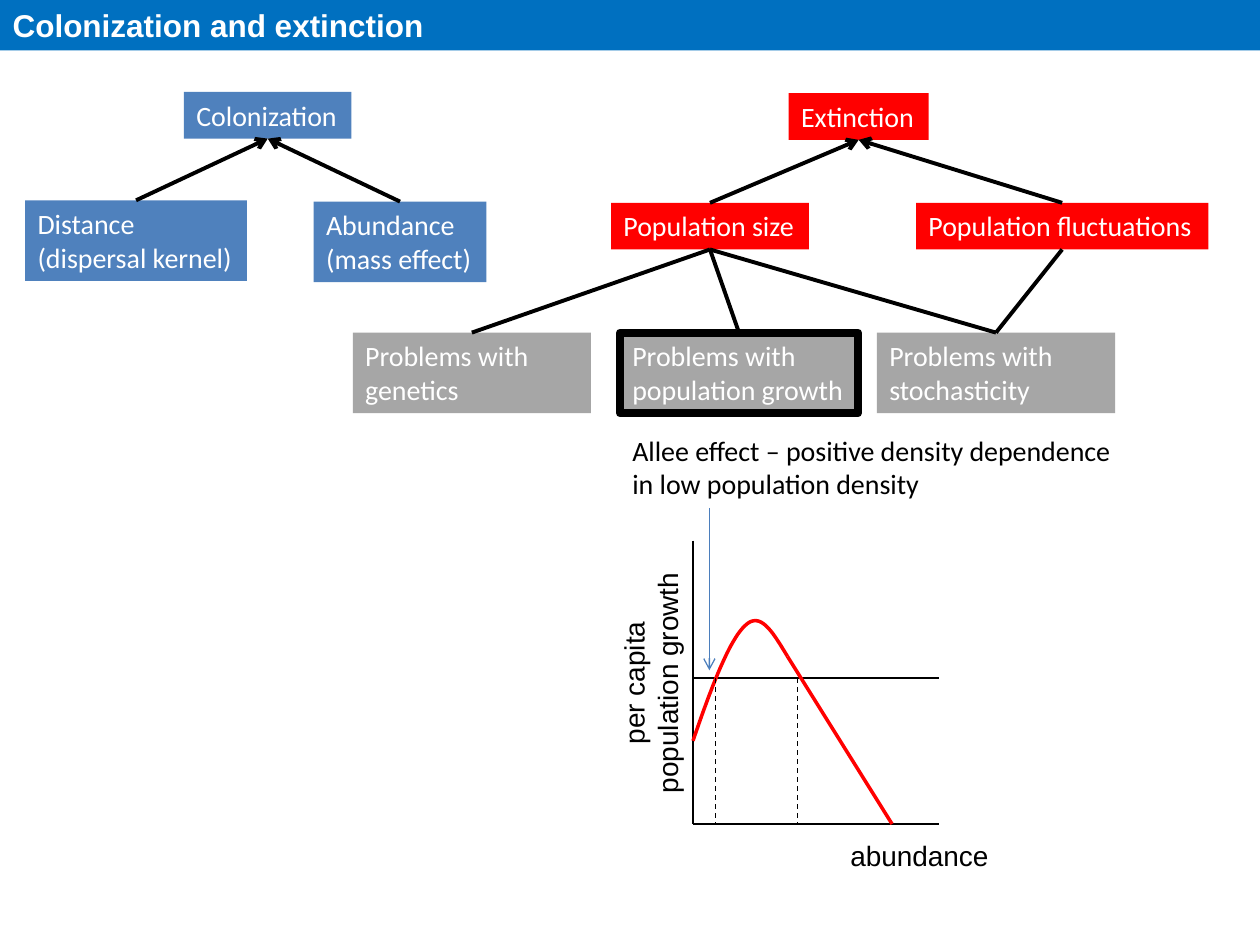
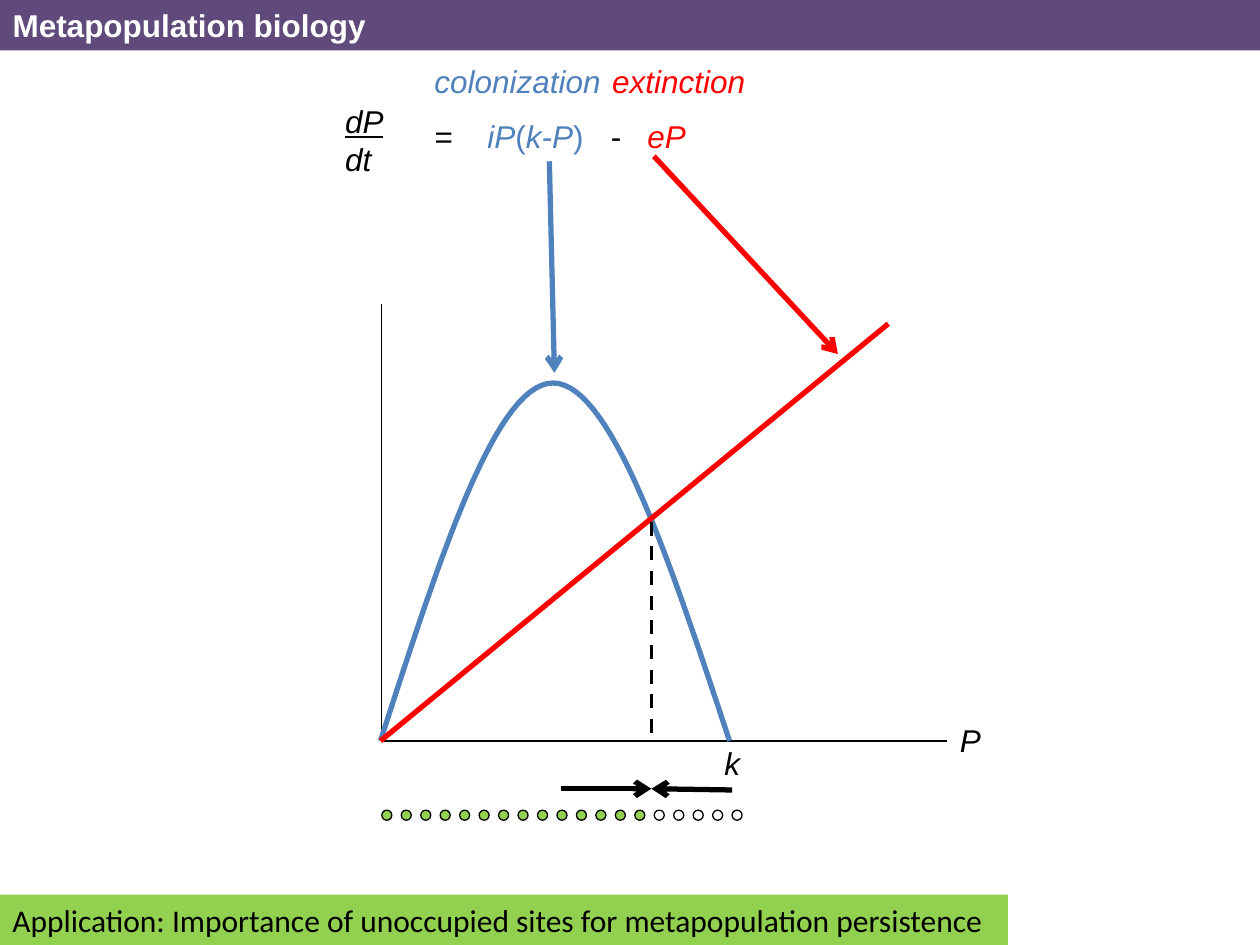
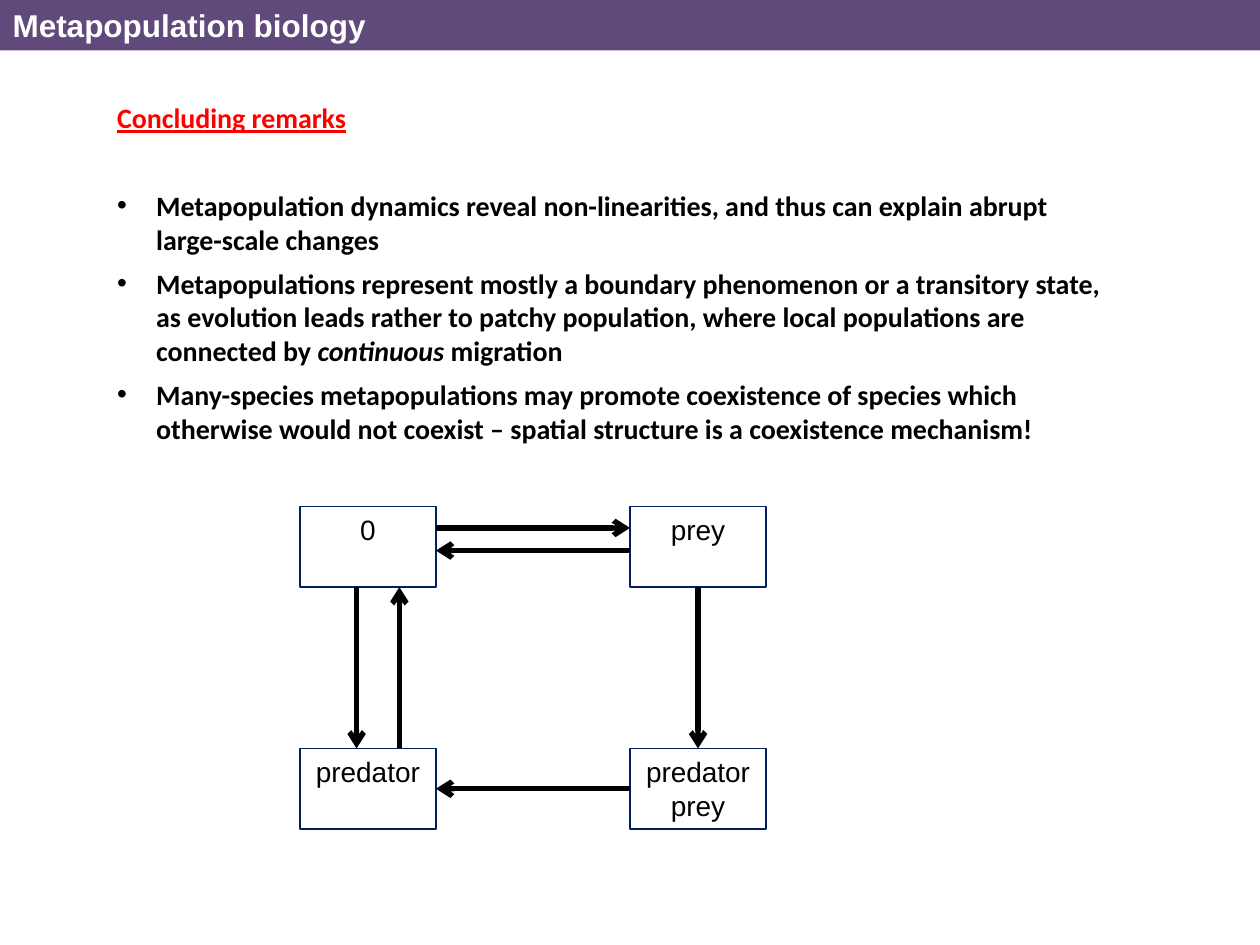
from lxml.etree import SubElement
from pptx import Presentation
from pptx.dml.color import RGBColor
from pptx.enum.dml import MSO_LINE_DASH_STYLE as Dash
from pptx.enum.shapes import MSO_CONNECTOR as Connector, MSO_SHAPE as Preset
from pptx.enum.text import MSO_ANCHOR as Anchor, MSO_AUTO_SIZE as AutoSize, PP_ALIGN as Align
from pptx.oxml.ns import qn
from pptx.util import Inches, Pt

BLACK, WHITE, RED, BLUE = "000000", "FFFFFF", "FF0000", "4F81BD"
GRAY, GREEN, NAVY, PURPLE, SKY = "A6A6A6", "92D050", "002060", "604A7B", "0070C0"
ARROW_BLUE = "4B7EBC"
TITLE_ONLY, TITLE_AND_BODY = 5, 1
TOP, LEFT, BOTTOM, RIGHT = range(4)

TREE_BOXES = {
    "colonization": ("Colonization", (1.46, 0.73, 1.33, 0.37), BLUE),
    "extinction": ("Extinction", (6.26, 0.74, 1.11, 0.37), RED),
    "distance": ("Distance\n(dispersal kernel)", (0.2, 1.59, 1.76, 0.64), BLUE),
    "abundance": ("Abundance\n(mass effect)", (2.49, 1.6, 1.37, 0.64), BLUE),
    "size": ("Population size", (4.85, 1.61, 1.57, 0.37), RED),
    "fluctuations": ("Population fluctuations", (7.27, 1.61, 2.32, 0.37), RED),
    "genetics": ("Problems with genetics", (2.8, 2.64, 1.89, 0.64), GRAY),
    "growth": ("Problems with population growth", (4.92, 2.64, 1.89, 0.64), GRAY),
    "stochasticity": ("Problems with stochasticity", (6.96, 2.64, 1.89, 0.64), GRAY),
}
TREE_LINKS = [
    ("distance", "colonization", True),
    ("abundance", "colonization", True),
    ("size", "extinction", True),
    ("fluctuations", "extinction", True),
    ("genetics", "size", False),
    ("growth", "size", False),
    ("stochasticity", "size", False),
    ("stochasticity", "fluctuations", False),
]
ALLEE_TEXT = "Allee effect – positive density dependence in low population density"
ALLEE_AXES = [
    ((5.5, 4.29), (5.5, 6.54)),
    ((5.5, 6.54), (7.45, 6.54)),
    ((5.5, 5.38), (7.45, 5.38)),
]
ALLEE_EQUILIBRIA = [5.68, 6.33]
ALLEE_CURVE = [(5.5, 5.88), (5.64, 5.47), (5.79, 5.07), (5.92, 4.96),
               (6.04, 4.85), (6.14, 5.03), (6.25, 5.21)]

LEVINS_AXES = [((3.03, 2.41), (3.03, 5.88)), ((3.03, 5.88), (7.52, 5.88))]
COLONIZATION_CURVE = [(3.02, 5.88), (3.48, 4.46), (3.93, 3.04), (4.39, 3.04),
                      (4.85, 3.04), (5.32, 4.46), (5.79, 5.88)]
LEVINS_ARROWS = [
    ((4.36, 1.28), (4.4, 2.96), BLUE),
    ((5.19, 1.24), (6.65, 2.81), RED),
    ((4.45, 6.26), (5.17, 6.26), BLACK),
    ((5.81, 6.27), (5.17, 6.26), BLACK),
]
EQUATION = [
    ("=\t", BLACK, False), ("iP", BLUE, True), ("(", BLUE, False), ("k-P", BLUE, True),
    (")\t", BLUE, False), ("-\t", BLACK, False), ("eP", RED, True),
]
EQUATION_TABS = [0.42, 1.4, 1.69]
LEVINS_LABELS = [
    ("colonization", (3.35, 0.44, 1.53, 0.4), BLUE),
    ("extinction", (4.76, 0.44, 1.27, 0.4), RED),
    ("k", (5.65, 5.86, 0.33, 0.4), BLACK),
    ("P", (7.52, 5.67, 0.37, 0.4), BLACK),
]
OCCUPIED_SITES, ALL_SITES = 14, 19
FIRST_SITE, LAST_SITE = 3.03, 5.81
APPLICATION = "Application: Importance of unoccupied sites for metapopulation persistence"

REMARKS_HEADING = "Concluding remarks"
REMARKS = [
    [("Metapopulation dynamics reveal non-linearities, and thus can explain abrupt "
      "large-scale changes", False)],
    [("Metapopulations represent mostly a boundary phenomenon or a transitory state, as "
      "evolution leads rather to patchy population, where local populations are connected by ", False),
     ("continuous", True), (" migration", False)],
    [("Many-species metapopulations may promote coexistence of species which otherwise would "
      "not coexist – spatial structure is a coexistence mechanism!", False)],
]
STATES = [["0", "prey"], ["predator", "predator\nprey"]]
STATE_COLUMNS, STATE_ROWS = (2.38, 5), (4.02, 5.94)
STATE_SIZE = (1.08, 0.64)
STATE_ARROWS = [
    ((3.46, 4.19), (5, 4.19)),
    ((5, 4.37), (3.46, 4.37)),
    ((2.83, 4.66), (2.83, 5.94)),
    ((3.17, 5.94), (3.17, 4.66)),
]


def rgb(color):
    return RGBColor.from_string(color)


def set_font(font, size, name, color, bold=False, italic=False):
    font.size, font.name, font.bold, font.italic = Pt(size), name, bold, italic
    font.color.rgb = rgb(color)


def place(shape, box):
    shape.left, shape.top, shape.width, shape.height = map(Inches, box)


def style_shape(shape, fill=None, line=None, width=0.75):
    shape.shadow.inherit = False
    if fill:
        shape.fill.solid()
        shape.fill.fore_color.rgb = rgb(fill)
    else:
        shape.fill.background()
    if line:
        shape.line.color.rgb = rgb(line)
        shape.line.width = Pt(width)
    else:
        shape.line.fill.background()


def add_preset(slide, preset, box, fill=None, line=None, width=0.75):
    shape = slide.shapes.add_shape(preset, *map(Inches, box))
    style_shape(shape, fill, line, width)
    return shape


def write(shape, text, size=16, name="Arial", color=BLACK, italic=False, align=Align.LEFT, wrap=False):
    frame = shape.text_frame
    frame.text = text
    frame.word_wrap = wrap
    frame.auto_size = AutoSize.SHAPE_TO_FIT_TEXT
    frame.vertical_anchor = Anchor.TOP
    for paragraph in frame.paragraphs:
        paragraph.alignment = align
        set_font(paragraph.font, size, name, color, italic=italic)
    return shape


def add_label(slide, text, box, **style):
    return write(slide.shapes.add_textbox(*map(Inches, box)), text, **style)


def add_line(slide, start=(0, 0), end=(0, 0), color=BLACK, width=0.75,
             arrow=False, dashed=False, begin_at=None, end_at=None):
    line = slide.shapes.add_connector(Connector.STRAIGHT, *map(Inches, (*start, *end)))
    line.line.color.rgb = rgb(color)
    line.line.width = Pt(width)
    if dashed:
        line.line.dash_style = Dash.DASH
    if begin_at:
        line.begin_connect(*begin_at)
    if end_at:
        line.end_connect(*end_at)
    properties = line._element.spPr
    if arrow:
        SubElement(properties.find(qn("a:ln")), qn("a:tailEnd"), type="arrow")
    SubElement(properties, qn("a:effectLst"))


def bezier(points, t):
    while len(points) > 1:
        points = [(x1 + (x2 - x1) * t, y1 + (y2 - y1) * t)
                  for (x1, y1), (x2, y2) in zip(points, points[1:])]
    return points[0]


def add_curve(slide, points, color, width, steps=30):
    vertices = [bezier(points[first:first + 4], step / steps)
                for first in range(0, len(points) - 1, 3) for step in range(1, steps + 1)]
    builder = slide.shapes.build_freeform(*map(Inches, points[0]))
    builder.add_line_segments([tuple(map(Inches, vertex)) for vertex in vertices], close=False)
    style_shape(builder.convert_to_shape(), line=color, width=width)


def add_slide(presentation, title, band, layout=TITLE_ONLY):
    slide = presentation.slides.add_slide(presentation.slide_layouts[layout])
    shape = slide.shapes.title
    place(shape, (0, 0, 10, 0.4))
    shape.fill.solid()
    shape.fill.fore_color.rgb = rgb(band)
    frame = shape.text_frame
    frame.text = title
    frame.auto_size = AutoSize.NONE
    frame.vertical_anchor = Anchor.TOP
    paragraph = frame.paragraphs[0]
    paragraph.alignment = Align.LEFT
    set_font(paragraph.font, 18, "Arial", WHITE, bold=True)
    return slide


def build_extinction_slide(presentation):
    slide = add_slide(presentation, "Colonization and extinction", SKY)
    boxes = {}
    for key, (text, box, fill) in TREE_BOXES.items():
        outline = BLACK if key == "growth" else None
        shape = add_preset(slide, Preset.RECTANGLE, box, fill, outline, 4.5)
        boxes[key] = write(shape, text, name="Calibri", color=WHITE, wrap=fill == GRAY)
    for child, parent, arrow in TREE_LINKS:
        add_line(slide, width=2.25, arrow=arrow,
                 begin_at=(boxes[child], TOP), end_at=(boxes[parent], BOTTOM))

    for start, end in ALLEE_AXES:
        add_line(slide, start, end)
    add_label(slide, "abundance", (6.65, 6.61, 1.31, 0.37))
    growth_label = add_label(slide, "per capita\npopulation growth", (4.18, 5.1, 1.97, 0.64),
                             align=Align.CENTER)
    growth_label.rotation = 270
    add_line(slide, ALLEE_CURVE[-1], (7.08, 6.54), RED, 2)
    add_curve(slide, ALLEE_CURVE, RED, 2)
    for x in ALLEE_EQUILIBRIA:
        add_line(slide, (x, 5.38), (x, 6.54), dashed=True)
    add_label(slide, ALLEE_TEXT, (4.92, 3.39, 4.16, 0.64), name="Calibri", wrap=True)
    add_line(slide, (5.63, 4.03), (5.63, 5.32), ARROW_BLUE, arrow=True)


def add_equation(slide):
    derivative = add_label(slide, "dP\ndt", (2.64, 0.76, 0.51, 0.71), size=18, italic=True)
    derivative.text_frame.paragraphs[0].font.underline = True
    equation = add_label(slide, "", (3.35, 0.88, 2.21, 0.4), size=18)
    paragraph = equation.text_frame.paragraphs[0]
    tabs = SubElement(paragraph._element.get_or_add_pPr(), qn("a:tabLst"))
    paragraph._element.pPr.insert(0, tabs)
    for position in EQUATION_TABS:
        SubElement(tabs, qn("a:tab"), pos=str(Inches(position)), algn="l")
    for text, color, italic in EQUATION:
        run = paragraph.add_run()
        run.text = text
        set_font(run.font, 18, "Arial", color, italic=italic)


def build_equilibrium_slide(presentation):
    slide = add_slide(presentation, "Metapopulation biology", PURPLE)
    for start, end in LEVINS_AXES:
        add_line(slide, start, end)
    add_curve(slide, COLONIZATION_CURVE, BLUE, 3)
    add_line(slide, (3.02, 5.88), (7.05, 2.57), RED, 3)
    add_line(slide, (5.17, 4.14), (5.17, 5.88), width=2, dashed=True)
    for start, end, color in LEVINS_ARROWS:
        add_line(slide, start, end, color, 3, arrow=True)
    add_equation(slide)
    for text, box, color in LEVINS_LABELS:
        add_label(slide, text, box, size=18, color=color, italic=True)
    pitch = (LAST_SITE - FIRST_SITE) / (ALL_SITES - 1)
    for site in range(ALL_SITES):
        fill = GREEN if site < OCCUPIED_SITES else None
        add_preset(slide, Preset.OVAL, (FIRST_SITE + site * pitch, 6.43, 0.08, 0.08), fill, BLACK)
    banner = add_preset(slide, Preset.RECTANGLE, (0, 7.1, 8, 0.4), GREEN)
    write(banner, APPLICATION, size=18, name="Calibri")


def add_remarks(slide):
    body = slide.placeholders[1]
    place(body, (0.83, 0.75, 8.16, 2.86))
    frame = body.text_frame
    frame.auto_size = AutoSize.NONE
    heading = frame.paragraphs[0]
    heading.text = REMARKS_HEADING
    set_font(heading.font, 16, "Calibri", RED, bold=True)
    heading.font.underline = True
    heading.space_before, heading.space_after = Pt(0), Pt(31)
    properties = heading._element.get_or_add_pPr()
    properties.set("marL", "0")
    properties.set("indent", "0")
    properties.insert_element_before(properties.makeelement(qn("a:buNone")), "a:tabLst", "a:defRPr")
    for runs in REMARKS:
        paragraph = frame.add_paragraph()
        paragraph.space_before, paragraph.space_after = Pt(0), Pt(6)
        properties = paragraph._element.get_or_add_pPr()
        properties.set("marL", str(Inches(0.31)))
        properties.set("indent", str(Inches(-0.31)))
        for text, italic in runs:
            run = paragraph.add_run()
            run.text = text
            set_font(run.font, 16, "Calibri", BLACK, bold=True, italic=italic)


def build_remarks_slide(presentation):
    slide = add_slide(presentation, "Metapopulation biology", PURPLE, TITLE_AND_BODY)
    add_remarks(slide)
    states = {}
    for top, texts in zip(STATE_ROWS, STATES):
        for left, text in zip(STATE_COLUMNS, texts):
            shape = add_preset(slide, Preset.RECTANGLE, (left, top, *STATE_SIZE), line=NAVY)
            states[text] = write(shape, text, align=Align.CENTER, wrap=True)
            shape.text_frame.auto_size = AutoSize.NONE
    for start, end in STATE_ARROWS:
        add_line(slide, start, end, width=3, arrow=True)
    both = states["predator\nprey"]
    add_line(slide, width=3, arrow=True, begin_at=(states["prey"], BOTTOM), end_at=(both, TOP))
    add_line(slide, width=3, arrow=True, begin_at=(both, LEFT), end_at=(states["predator"], RIGHT))


def main():
    presentation = Presentation()
    presentation.slide_width, presentation.slide_height = Inches(10), Inches(7.5)
    build_extinction_slide(presentation)
    build_equilibrium_slide(presentation)
    build_remarks_slide(presentation)
    presentation.save("out.pptx")


if __name__ == "__main__":
    main()
